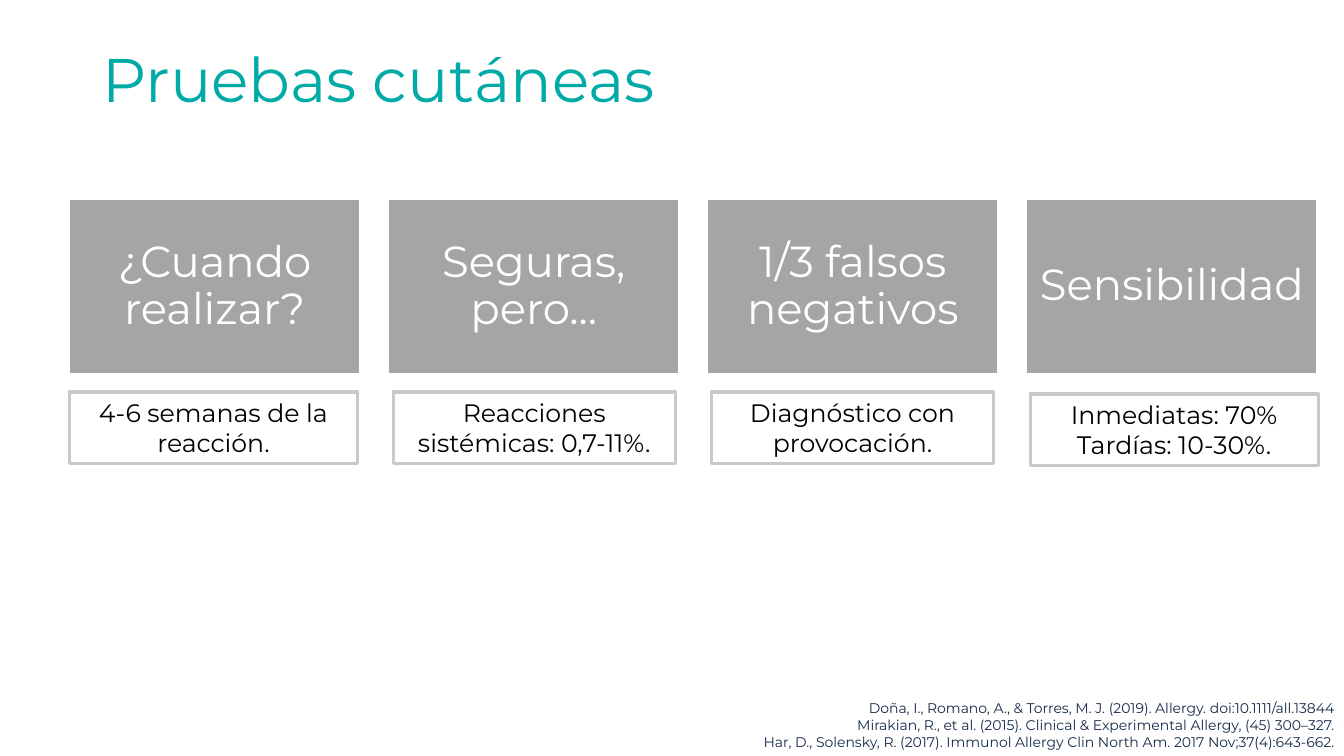
from pptx import Presentation
from pptx.dml.color import RGBColor
from pptx.enum.shapes import MSO_SHAPE as SHAPE
from pptx.enum.text import MSO_ANCHOR as ANCHOR, PP_ALIGN as ALIGN
from pptx.util import Cm, Pt

FONT = "Montserrat"
COLORS = {
    "title": "00AAA7",
    "card": "A5A5A5",
    "white": "FFFFFF",
    "border": "C9C9C9",
    "text": "000000",
    "reference": "152B48",
}
CARD_LEFT, CARD_PITCH = 1.75, 8.04

# Card heading, then note lines with the note's left, top and width in cm
TOPICS = [
    ("¿Cuando realizar?", ["4-6 semanas de la reacción."], (1.75, 9.88, 7.26)),
    ("Seguras, pero...", ["Reacciones sistémicas: 0,7-11%."], (9.91, 9.88, 7.11)),
    ("1/3 falsos negativos", ["Diagnóstico con provocación."], (17.93, 9.88, 7.11)),
    ("Sensibilidad", ["Inmediatas: 70%", "Tardías: 10-30%."], (25.96, 9.93, 7.26)),
]
REFERENCES = [
    "Doña, I., Romano, A., & Torres, M. J. (2019). Allergy. doi:10.1111/all.13844",
    "Mirakian, R., et al. (2015). Clinical & Experimental Allergy, (45) 300–327.",
    "Har, D., Solensky, R. (2017). Immunol Allergy Clin North Am. 2017 Nov;37(4):643-662.",
]


def rgb(name):
    return RGBColor.from_string(COLORS[name])


def write(sp, lines, size, color, align=ALIGN.CENTER, anchor=ANCHOR.TOP, spacing=1.0):
    """Fill a shape with one paragraph per line."""
    tf = sp.text_frame
    tf.word_wrap = True
    tf.vertical_anchor = anchor
    for i, line in enumerate(lines):
        p = tf.paragraphs[0] if i == 0 else tf.add_paragraph()
        p.alignment = align
        p.line_spacing = spacing
        r = p.add_run()
        r.text = line
        r.font.name = FONT
        r.font.size = Pt(size)
        r.font.color.rgb = rgb(color)
    return tf


def add_text(s, box, lines, size, color, **layout):
    sp = s.shapes.add_textbox(*map(Cm, box))
    write(sp, lines, size, color, **layout)


def add_box(s, box, line, width):
    sp = s.shapes.add_shape(SHAPE.RECTANGLE, *map(Cm, box))
    sp.shadow.inherit = False
    sp.line.color.rgb = rgb(line)
    sp.line.width = Pt(width)
    return sp


def add_card(s, left, heading):
    sp = add_box(s, (left, 5.03, 7.32, 4.39), "white", 1)
    sp.fill.solid()
    sp.fill.fore_color.rgb = rgb("card")
    tf = write(sp, [heading], 31, "white", anchor=ANCHOR.MIDDLE, spacing=0.9)
    tf.margin_left = tf.margin_right = Cm(0.3)
    tf.margin_top = tf.margin_bottom = Cm(0.3)


def add_note(s, left, top, width, lines):
    sp = add_box(s, (left, top, width, 1.8), "border", 2.25)
    sp.fill.background()
    write(sp, lines, 18, "text")


def main():
    prs = Presentation()
    prs.slide_width, prs.slide_height = Cm(33.87), Cm(19.05)
    s = prs.slides.add_slide(prs.slide_layouts[6])

    add_text(s, (1.75, 0.25, 15.6, 3.68), ["Pruebas cutáneas"], 44, "title",
             anchor=ANCHOR.MIDDLE, spacing=0.9)
    for i, (heading, lines, place) in enumerate(TOPICS):
        add_card(s, CARD_LEFT + i * CARD_PITCH, heading)
        add_note(s, *place, lines)
    add_text(s, (0, 17.5, 33.87, 1.55), REFERENCES, 10, "reference", align=ALIGN.RIGHT)

    prs.save("out.pptx")


if __name__ == "__main__":
    main()
